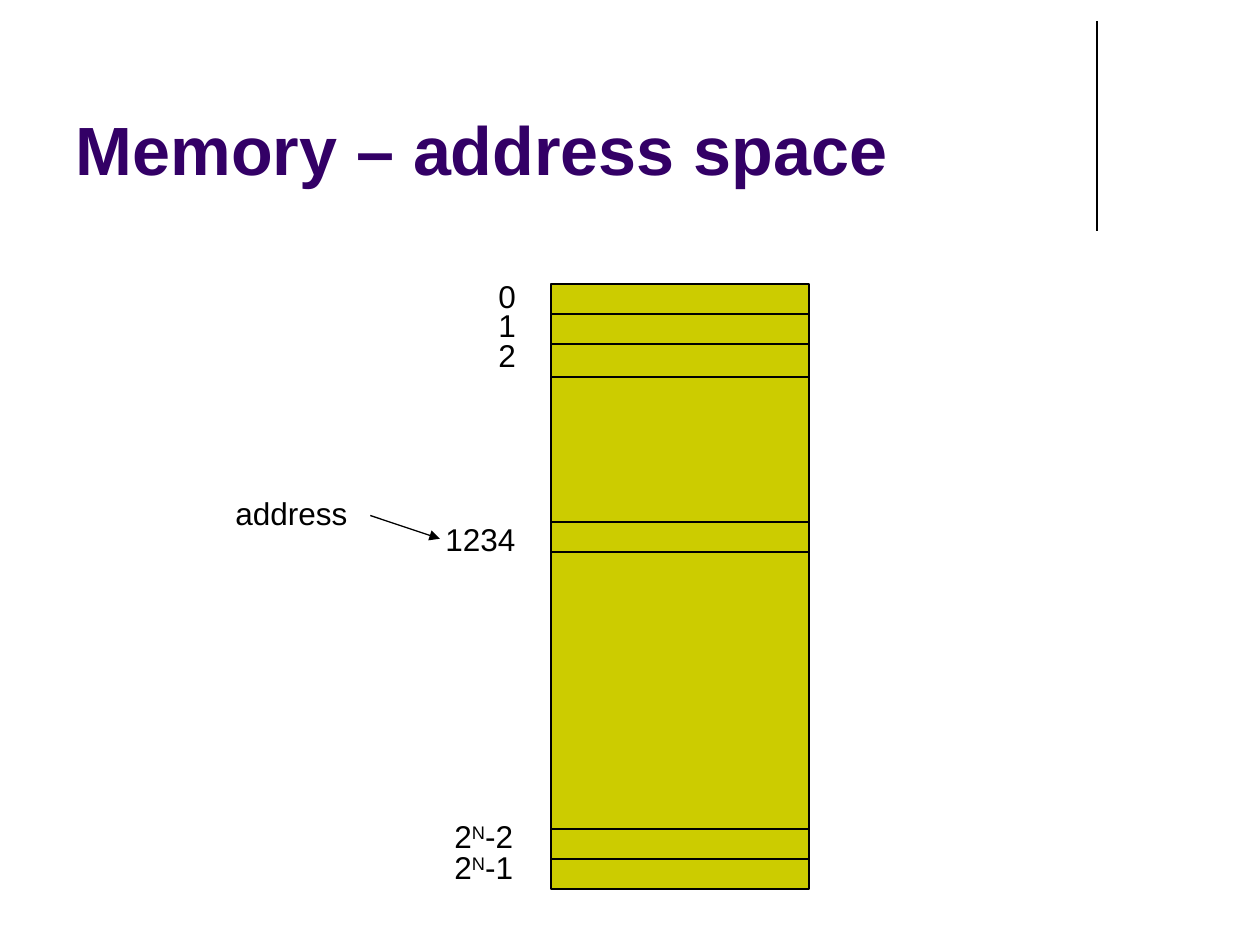
from lxml.etree import SubElement
from pptx import Presentation
from pptx.dml.color import RGBColor
from pptx.enum.shapes import MSO_CONNECTOR, MSO_SHAPE
from pptx.enum.text import MSO_ANCHOR, MSO_AUTO_SIZE, PP_ALIGN
from pptx.oxml.ns import qn
from pptx.util import Emu, Pt

PX = 914400 // 126
BLACK = RGBColor(0x00, 0x00, 0x00)
PURPLE = RGBColor(0x33, 0x00, 0x66)
OLIVE = RGBColor(0xCC, 0xCC, 0x00)

MEMORY_LEFT, MEMORY_TOP, MEMORY_WIDTH, MEMORY_HEIGHT = 551, 284, 258, 605
CELL_EDGES = [314, 344, 377, 522, 552, 829, 859]
LABEL_RIGHT = 529
# top, width, text before, superscript, text after
ADDRESSES = [
    (271, 43, "0", "", ""),
    (300, 43, "1", "", ""),
    (330, 43, "2", "", ""),
    (514, 96, "1234", "", ""),
    (811, 87, "2", "N", "-2"),
    (842, 87, "2", "N", "-1"),
]


def px(*lengths):
    return [Emu(length * PX) for length in lengths]


def add_run(paragraph, text, size=18, color=BLACK, bold=False, superscript=False):
    run = paragraph.add_run()
    run.text = text
    run.font.name = "Arial"
    run.font.size = Pt(size)
    run.font.bold = bold
    run.font.color.rgb = color
    if superscript:
        run.font._element.set("baseline", "30000")


def set_outline(shape):
    shape.line.color.rgb = BLACK
    shape.line.width = Pt(0.75)


def add_title(slide, text):
    title = slide.shapes.title
    title.left, title.top, title.width, title.height = px(63, 16, 1040, 179)
    frame = title.text_frame
    frame.vertical_anchor = MSO_ANCHOR.BOTTOM
    frame.auto_size = MSO_AUTO_SIZE.NONE
    frame.paragraphs[0].alignment = PP_ALIGN.LEFT
    add_run(frame.paragraphs[0], text, size=39, color=PURPLE, bold=True)


def add_line(slide, x1, y1, x2, y2):
    line = slide.shapes.add_connector(MSO_CONNECTOR.STRAIGHT, *px(x1, y1, x2, y2))
    set_outline(line)
    SubElement(line._element.spPr, qn("a:effectLst"))


def add_memory(slide):
    memory = slide.shapes.add_shape(
        MSO_SHAPE.RECTANGLE,
        *px(MEMORY_LEFT, MEMORY_TOP, MEMORY_WIDTH, MEMORY_HEIGHT))
    memory.shadow.inherit = False
    memory.fill.solid()
    memory.fill.fore_color.rgb = OLIVE
    set_outline(memory)
    for edge in CELL_EDGES:
        add_line(slide, MEMORY_LEFT, edge, MEMORY_LEFT + MEMORY_WIDTH, edge)


def add_address(slide, top, width, base, exponent, rest):
    box = slide.shapes.add_textbox(*px(LABEL_RIGHT - width, top, width, 50))
    frame = box.text_frame
    frame.word_wrap = False
    frame.auto_size = MSO_AUTO_SIZE.SHAPE_TO_FIT_TEXT
    paragraph = frame.paragraphs[0]
    add_run(paragraph, base)
    if exponent:
        add_run(paragraph, exponent, superscript=True)
        add_run(paragraph, rest)


def add_callout(slide, text):
    """Add borderless text whose leader line ends in an arrowhead."""
    callout = slide.shapes.add_shape(
        MSO_SHAPE.LINE_CALLOUT_1_NO_BORDER, *px(223, 488, 139, 54))
    for index, value in enumerate((0.51, 1.06, 0.94, 1.56)):
        callout.adjustments[index] = value
    callout.shadow.inherit = False
    callout.fill.background()
    set_outline(callout)
    SubElement(callout.line._get_or_add_ln(), qn("a:tailEnd"), type="triangle")
    frame = callout.text_frame
    frame.word_wrap = False
    frame.vertical_anchor = MSO_ANCHOR.TOP
    frame.paragraphs[0].alignment = PP_ALIGN.LEFT
    add_run(frame.paragraphs[0], text)


def main():
    presentation = Presentation()
    presentation.slide_width, presentation.slide_height = px(1260, 945)
    slide = presentation.slides.add_slide(presentation.slide_layouts[5])
    add_line(slide, 1097, 21, 1097, 231)
    add_title(slide, "Memory – address space")
    add_memory(slide)
    for address in ADDRESSES:
        add_address(slide, *address)
    add_callout(slide, "address")
    presentation.save("out.pptx")


if __name__ == "__main__":
    main()
